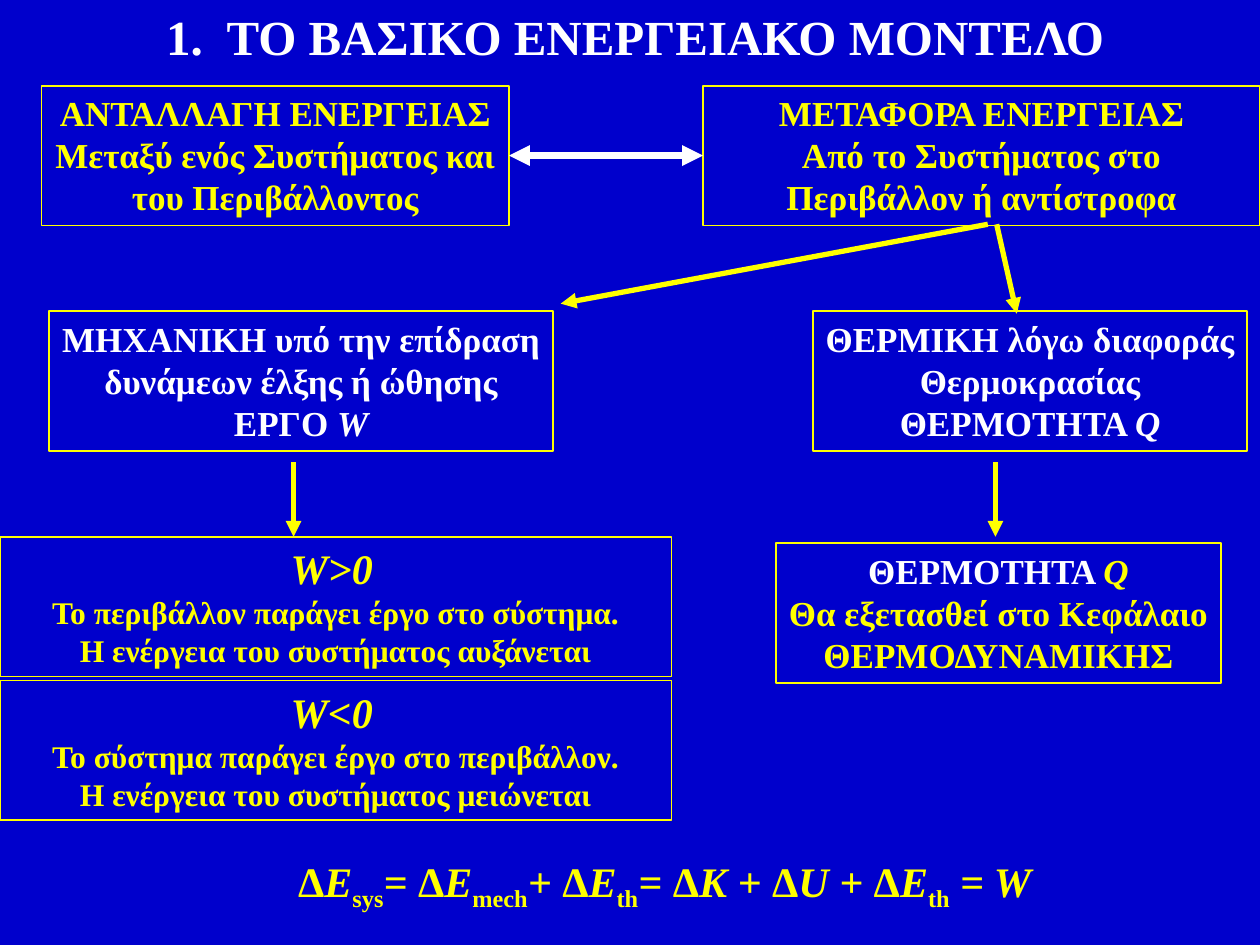
from dataclasses import dataclass
from typing import Optional

from pptx import Presentation
from pptx.dml.color import RGBColor
from pptx.enum.shapes import MSO_CONNECTOR, MSO_SHAPE
from pptx.enum.text import MSO_ANCHOR, MSO_AUTO_SIZE, PP_ALIGN
from pptx.oxml.ns import qn
from pptx.util import Inches, Pt
from lxml.etree import SubElement

COLORS = {"background": "0000CC", "yellow": "FFFF00", "white": "FFFFFF"}
FONT = "Times New Roman"


@dataclass
class Span:
    text: str
    size: float = 20
    color: str = "yellow"
    italic: bool = False
    subscript: bool = False


@dataclass
class Box:
    name: str
    place: tuple[float, float, float, float]
    lines: list[list[Span]]
    wrap: bool = False


@dataclass
class Arrow:
    start: tuple[float, float]
    end: tuple[float, float]
    color: str = "yellow"
    width: float = 3
    double: bool = False
    joins: Optional[tuple[str, str]] = None


def rgb(color: str) -> RGBColor:
    return RGBColor.from_string(COLORS[color])


def plain(*texts: str, color: str = "yellow", size: float = 20) -> list[list[Span]]:
    return [[Span(text, size, color)] for text in texts]


def symbol_line(label: str, symbol: str, symbol_color: str = "white") -> list[Span]:
    return [Span(label, color="white"), Span(symbol, color=symbol_color, italic=True)]


def work_lines(sign: str, *texts: str) -> list[list[Span]]:
    heading = [Span(f"W{sign}0", 24, italic=True), Span(" ", 18, italic=True)]
    return [heading, *plain(*texts, size=18)]


def formula_line() -> list[Span]:
    terms = [("Ε", "sys", "= "), ("E", "mech", "+ "), ("E", "th", "= "),
             ("K + ", "", ""), ("U + ", "", ""), ("E", "th", " = W")]
    spans = []
    for quantity, index, operator in terms:
        spans += [Span("Δ", 24), Span(quantity, 24, italic=True)]
        if index:
            spans += [Span(index, 24, subscript=True), Span(operator, 24, italic=True)]
    return spans


def write(shape, lines: list[list[Span]], wrap: bool) -> None:
    frame = shape.text_frame
    formats = {
        "word_wrap": wrap,
        "auto_size": MSO_AUTO_SIZE.SHAPE_TO_FIT_TEXT,
        "vertical_anchor": MSO_ANCHOR.TOP,
        "margin_left": Inches(0.1), "margin_right": Inches(0.1),
        "margin_top": Inches(0.05), "margin_bottom": Inches(0.05),
    }
    for name, value in formats.items():
        setattr(frame, name, value)
    for number, line in enumerate(lines):
        para = frame.add_paragraph() if number else frame.paragraphs[0]
        para.alignment = PP_ALIGN.CENTER
        for item in line:
            span = para.add_run()
            span.text = item.text
            font_formats = {"name": FONT, "size": Pt(item.size),
                            "bold": True, "italic": item.italic}
            for name, value in font_formats.items():
                setattr(span.font, name, value)
            span.font.color.rgb = rgb(item.color)
            if item.subscript:
                span.font._element.set("baseline", "-25000")


def draw_box(page, box: Box):
    shape = page.shapes.add_shape(MSO_SHAPE.RECTANGLE, *map(Inches, box.place))
    shape.shadow.inherit = False
    shape.fill.background()
    shape.line.color.rgb = rgb("yellow")
    shape.line.width = Pt(1)
    write(shape, box.lines, box.wrap)
    return shape


def draw_arrow(page, arrow: Arrow, shapes: dict) -> None:
    connector = page.shapes.add_connector(
        MSO_CONNECTOR.STRAIGHT, *map(Inches, arrow.start + arrow.end))
    if arrow.joins:
        first, second = arrow.joins
        connector.begin_connect(shapes[first], 3)
        connector.end_connect(shapes[second], 1)
    connector.line.color.rgb = rgb(arrow.color)
    connector.line.width = Pt(arrow.width)
    line = connector.line._get_or_add_ln()
    for tag in ("a:headEnd", "a:tailEnd") if arrow.double else ("a:tailEnd",):
        SubElement(line, qn(tag), type="triangle")
    SubElement(connector._element.spPr, qn("a:effectLst"))


BOXES = [
    Box("exchange", (0.33, 0.68, 3.71, 1.11),
        plain("ΑΝΤΑΛΛΑΓΗ ΕΝΕΡΓΕΙΑΣ", "Μεταξύ ενός Συστήματος και", "του Περιβάλλοντος")),
    Box("transfer", (5.58, 0.68, 4.42, 1.11),
        plain("ΜΕΤΑΦΟΡΑ ΕΝΕΡΓΕΙΑΣ", "Από το Συστήματος στο", "Περιβάλλον ή αντίστροφα"),
        wrap=True),
    Box("mechanical", (0.39, 2.47, 4, 1.11),
        plain("ΜΗΧΑΝΙΚΗ υπό την επίδραση", "δυνάμεων έλξης ή ώθησης", color="white")
        + [symbol_line("ΕΡΓΟ ", "W")]),
    Box("thermal", (6.45, 2.47, 3.45, 1.11),
        plain("ΘΕΡΜΙΚΗ λόγω διαφοράς", "Θερμοκρασίας", color="white")
        + [symbol_line("ΘΕΡΜΟΤΗΤΑ ", "Q")]),
    Box("positive work", (0, 4.26, 5.33, 1.11),
        work_lines(">", "Το περιβάλλον παράγει έργο στο σύστημα.",
                   "Η ενέργεια του συστήματος αυξάνεται"), wrap=True),
    Box("negative work", (0, 5.4, 5.33, 1.11),
        work_lines("<", "Το σύστημα παράγει έργο στο περιβάλλον.",
                   "Η ενέργεια του συστήματος μειώνεται"), wrap=True),
    Box("heat", (6.16, 4.31, 3.53, 1.11),
        [symbol_line("ΘΕΡΜΟΤΗΤΑ ", "Q", "yellow"),
         *plain("Θα εξετασθεί στο Κεφάλαιο", "ΘΕΡΜΟΔΥΝΑΜΙΚΗΣ")]),
]

ARROWS = [
    Arrow((4.06, 1.23), (5.61, 1.23), "white", 4, True, ("exchange", "transfer")),
    Arrow((7.84, 1.78), (4.45, 2.41)),
    Arrow((7.91, 1.78), (8.07, 2.49)),
    Arrow((2.33, 3.67), (2.33, 4.26)),
    Arrow((7.9, 3.67), (7.9, 4.26)),
]


def main() -> None:
    deck = Presentation()
    deck.slide_width, deck.slide_height = Inches(10), Inches(7.5)
    page = deck.slides.add_slide(deck.slide_layouts[5])
    page.background.fill.solid()
    page.background.fill.fore_color.rgb = rgb("background")

    title = page.shapes.title
    title.left, title.top, title.width, title.height = map(Inches, (1, 0, 8.08, 0.57))
    write(title, [[Span("1.  ΤΟ ΒΑΣΙΚΟ ΕΝΕΡΓΕΙΑΚΟ ΜΟΝΤΕΛΟ", 28, "white")]], True)

    shapes = {box.name: draw_box(page, box) for box in BOXES}
    for arrow in ARROWS:
        draw_arrow(page, arrow, shapes)

    formula = page.shapes.add_textbox(*map(Inches, (2.18, 6.74, 6.19, 0.5)))
    write(formula, [formula_line()], False)
    deck.save("out.pptx")


if __name__ == "__main__":
    main()
